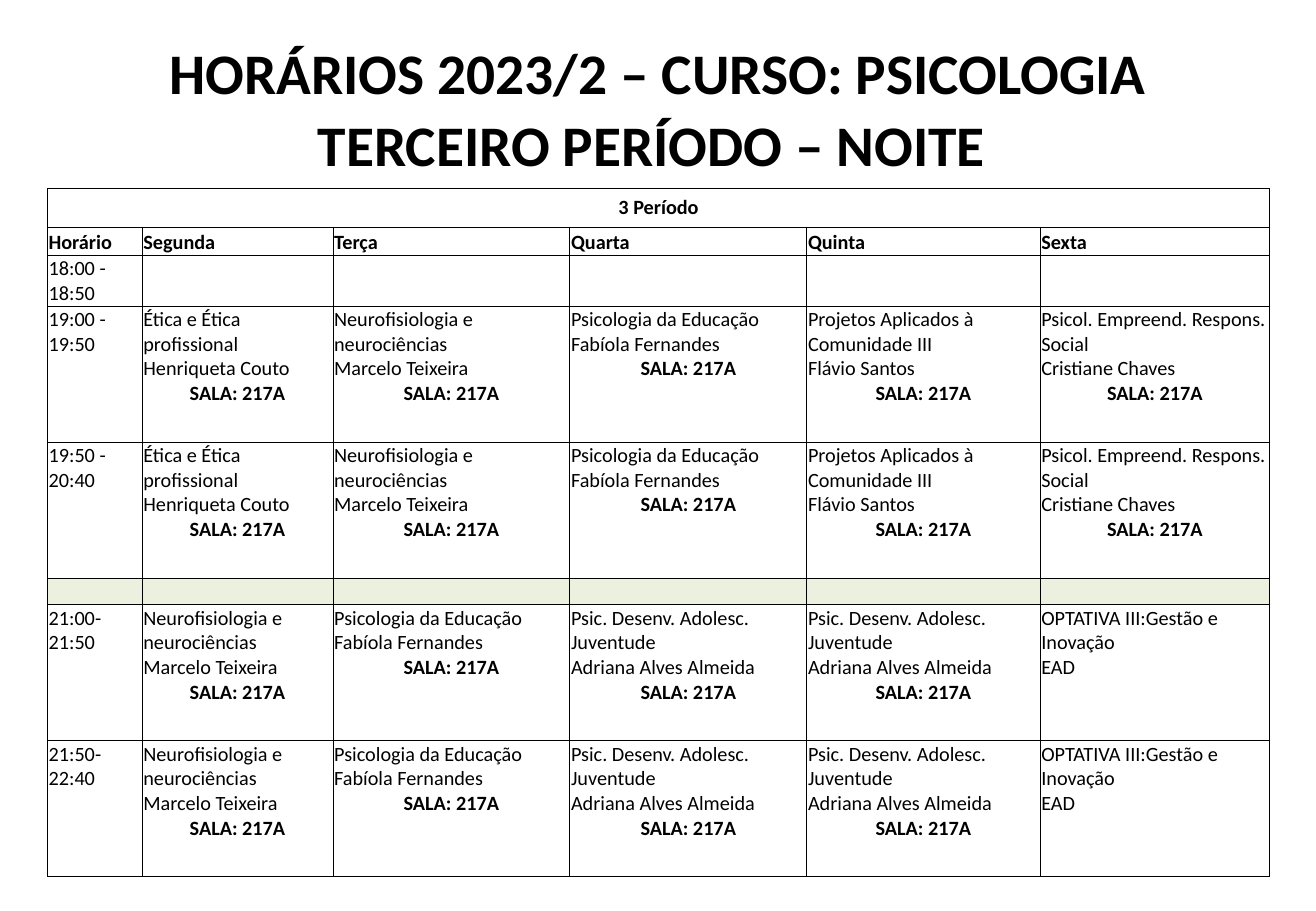
import pptx
import pptx.dml.color
import pptx.enum.text
import pptx.oxml.ns
import pptx.util
from lxml import etree

Inches, Pt, qn = pptx.util.Inches, pptx.util.Pt, pptx.oxml.ns.qn
Align, Anchor = pptx.enum.text.PP_ALIGN, pptx.enum.text.MSO_ANCHOR
BLACK = pptx.dml.color.RGBColor(0x00, 0x00, 0x00)
BREAK_GREEN = pptx.dml.color.RGBColor(0xEB, 0xF1, 0xDE)

ROOM = "SALA: 217A"
DAYS = ["Horário", "Segunda", "Terça", "Quarta", "Quinta", "Sexta"]
ETHICS = ["Ética e Ética profissional\nHenriqueta Couto", ROOM]
NEURO = ["Neurofisiologia e neurociências\nMarcelo Teixeira", ROOM]
EDUCATION = ["Psicologia da Educação\nFabíola Fernandes", ROOM]
PROJECTS = ["Projetos Aplicados à Comunidade III\nFlávio Santos", ROOM]
ENTERPRISE = ["Psicol. Empreend. Respons. Social\nCristiane Chaves", ROOM]
YOUTH = ["Psic. Desenv. Adolesc. Juventude\nAdriana Alves Almeida", ROOM]
ELECTIVE = ["OPTATIVA III:Gestão e Inovação\nEAD"]
EARLY = [ETHICS, NEURO, EDUCATION, PROJECTS, ENTERPRISE]
LATE = [NEURO, EDUCATION, YOUTH, YOUTH, ELECTIVE]
EMPTY = [[""]] * 5

COLUMN_WIDTHS = [0.78, 1.57, 1.95, 1.95, 1.92, 1.89]
CLASS_HEIGHT = 1.12
BREAK_ROW = 5
ROWS = [
    (0.32, [["3 Período"]] + EMPTY),
    (0.23, [[day] for day in DAYS]),
    (0.42, [["18:00 - 18:50"]] + EMPTY),
    (CLASS_HEIGHT, [["19:00 - 19:50"]] + EARLY),
    (CLASS_HEIGHT, [["19:50 - 20:40"]] + EARLY),
    (0.22, [[""]] + EMPTY),
    (CLASS_HEIGHT, [["21:00-21:50"]] + LATE),
    (CLASS_HEIGHT, [["21:50-22:40"]] + LATE),
]


def write_lines(frame, lines, size, bold_lines, centred_lines):
    """Fill a text frame with one paragraph per line and return the paragraphs."""
    for index, line in enumerate(lines):
        para = frame.paragraphs[0] if index == 0 else frame.add_paragraph()
        para.text = line
        para.alignment = Align.CENTER if line in centred_lines else Align.LEFT
        for span in para.runs:
            span.font.color.rgb = BLACK
            font = {"name": "Calibri", "size": Pt(size), "bold": line in bold_lines}
            for name, value in font.items():
                setattr(span.font, name, value)
        # Line breaks and empty paragraphs need the text size too.
        for line_break in para._p.findall(qn("a:br")):
            etree.SubElement(line_break, qn("a:rPr"), sz=str(size * 100))
        if not line:
            etree.SubElement(para._p, qn("a:endParaRPr"), sz=str(size * 100))
    return frame.paragraphs


def draw_borders(cell):
    properties = cell._tc.get_or_add_tcPr()
    for side in ("a:lnL", "a:lnR", "a:lnT", "a:lnB"):
        border = etree.SubElement(properties, qn(side), w=str(Pt(0.5)))
        paint = etree.SubElement(border, qn("a:solidFill"))
        etree.SubElement(paint, qn("a:srgbClr"), val=str(BLACK))


deck = pptx.Presentation()
deck.slide_width, deck.slide_height = Inches(10.83), Inches(7.5)
page = deck.slides.add_slide(deck.slide_layouts[6])

title = ["HORÁRIOS 2023/2 – CURSO: PSICOLOGIA", "TERCEIRO PERÍODO – NOITE "]
box = page.shapes.add_textbox(Inches(0.54), Inches(0.3), Inches(9.75), Inches(1.25))
box.text_frame.word_wrap = True
box.text_frame.vertical_anchor = Anchor.MIDDLE
for para in write_lines(box.text_frame, title, 34, title, title):
    para.line_spacing = 0.9
    para.space_after = Pt(6)

heights = [height for height, _ in ROWS]
timetable = page.shapes.add_table(
    len(ROWS), len(DAYS), Inches(0.39), Inches(1.55),
    Inches(sum(COLUMN_WIDTHS)), Inches(sum(heights))).table
timetable.first_row = timetable.horz_banding = False
for column, width in zip(timetable.columns, COLUMN_WIDTHS):
    column.width = Inches(width)
for row, height in zip(timetable.rows, heights):
    row.height = Inches(height)
timetable.cell(0, 0).merge(timetable.cell(0, len(DAYS) - 1))

bold_lines = ["3 Período", ROOM] + DAYS
for r, (_, entries) in enumerate(ROWS):
    side, top, bottom = (0.12, 0.06, 0.06) if r == 0 else (0.01, 0.01, 0)
    for c, lines in enumerate(entries):
        cell = timetable.cell(r, c)
        layout = {
            "margin_left": Inches(side), "margin_right": Inches(side),
            "margin_top": Inches(top), "margin_bottom": Inches(bottom),
            "vertical_anchor": Anchor.BOTTOM if r == 1 else Anchor.TOP,
        }
        for name, value in layout.items():
            setattr(cell, name, value)
        draw_borders(cell)
        if r == BREAK_ROW:
            cell.fill.solid()
            cell.fill.fore_color.rgb = BREAK_GREEN
        else:
            cell.fill.background()
        write_lines(cell.text_frame, lines, 12, bold_lines, ["3 Período", ROOM])

deck.save("out.pptx")
